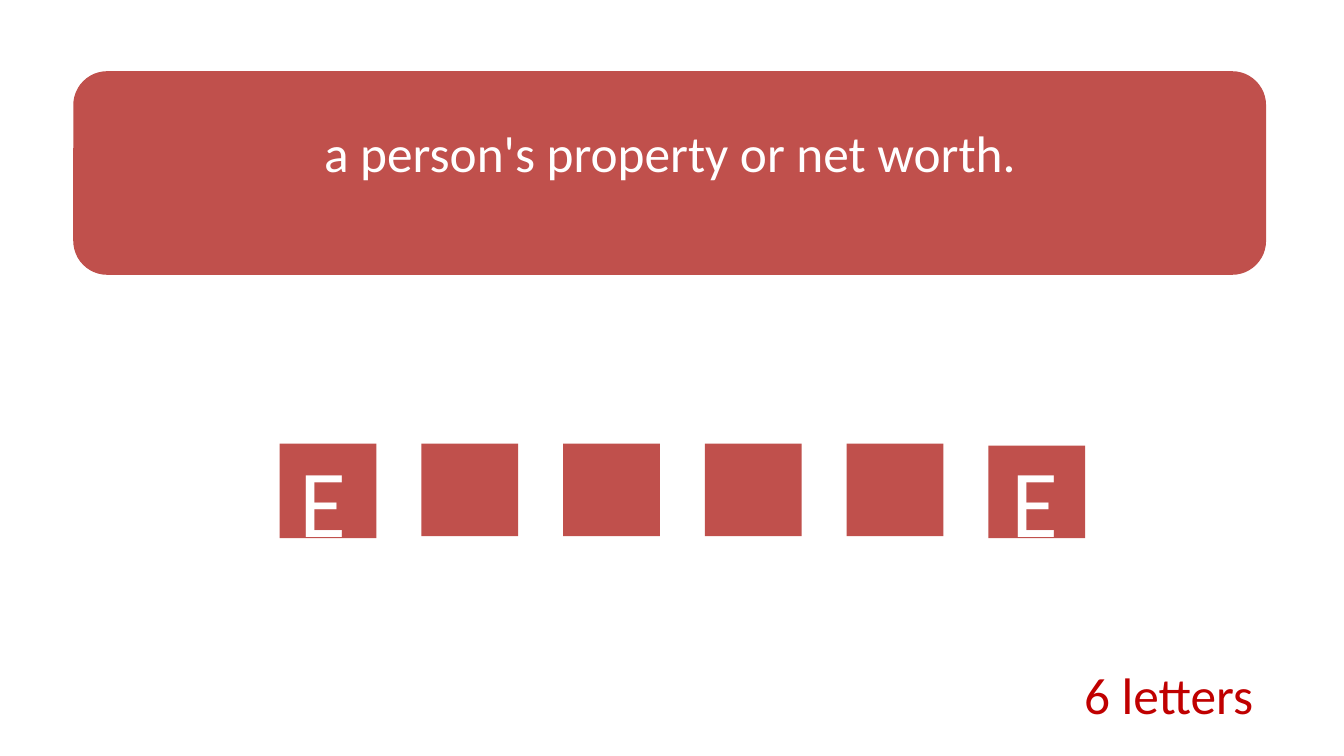
from dataclasses import dataclass

from pptx import Presentation, util as u
from pptx.dml.color import RGBColor
from pptx.enum import shapes, text


@dataclass(frozen=True)
class Theme:
    """Colours, font and type sizes of the word puzzle."""
    tile: RGBColor = RGBColor(0xC0, 0x50, 0x4C)
    light: RGBColor = RGBColor(0xFF, 0xFF, 0xFF)
    hint: RGBColor = RGBColor(0xC0, 0x00, 0x00)
    font: str = "Calibri"
    body_size: float = 55
    letter_size: float = 102.9


THEME = Theme()
COLUMNS, ROWS = 200, 112.5
SLIDE_WIDTH, SLIDE_HEIGHT = u.Inches(20), u.Inches(11.25)
TILE_LEFT, TILE_PITCH, TILE_WIDTH = 41.6, 21.1, 14.4
TILE_SPANS = [(66, 14.1)] + [(66, 13.8)] * 4 + [(66.3, 13.8)]


def grid_box(left, top, width, height):
    """Turn columns and rows of the slide grid into lengths."""
    column, row = SLIDE_WIDTH / COLUMNS, SLIDE_HEIGHT / ROWS
    return [u.Emu(round(length)) for length in
            (left * column, top * row, width * column, height * row)]


def set_format(target, values):
    """Set each attribute of the target from a dict of values."""
    for name, value in values.items():
        setattr(target, name, value)


def add_block(slide, kind, box):
    """Add a flat filled shape without outline or shadow."""
    shape = slide.shapes.add_shape(kind, *grid_box(*box))
    shape.shadow.inherit = False
    shape.fill.solid()
    shape.fill.fore_color.rgb = THEME.tile
    shape.line.fill.background()


def add_label(slide, wording, box, size, color, spacing, align):
    """Add one line of text in a box without margins."""
    frame = slide.shapes.add_textbox(*grid_box(*box)).text_frame
    set_format(frame, {
        "word_wrap": True, "auto_size": text.MSO_AUTO_SIZE.SHAPE_TO_FIT_TEXT,
        "margin_left": 0, "margin_top": 0, "margin_right": 0, "margin_bottom": 0})
    paragraph = frame.paragraphs[0]
    set_format(paragraph, {"alignment": align, "line_spacing": u.Pt(spacing)})
    run = paragraph.add_run()
    run.text = wording
    set_format(run.font, {"name": THEME.font, "size": u.Pt(size)})
    run.font.color.rgb = color


def add_tiles(slide):
    """Add the row of letter tiles."""
    for index, (top, height) in enumerate(TILE_SPANS):
        left = TILE_LEFT + index * TILE_PITCH
        add_block(slide, shapes.MSO_SHAPE.RECTANGLE, (left, top, TILE_WIDTH, height))


def main():
    """Build the word puzzle slide and save it."""
    presentation = Presentation()
    set_format(presentation, {"slide_width": SLIDE_WIDTH, "slide_height": SLIDE_HEIGHT})
    slide = presentation.slides.add_slide(presentation.slide_layouts[6])
    add_tiles(slide)
    for left in (44.6, 150.5):
        add_label(slide, "E", (left, 62.8, 15.8, 19), THEME.letter_size,
                  THEME.light, 144.1, text.PP_ALIGN.LEFT)
    add_label(slide, "6 letters", (156.7, 101.6, 34.4, 6.8), THEME.body_size,
              THEME.hint, 44.5, text.PP_ALIGN.CENTER)
    add_block(slide, shapes.MSO_SHAPE.ROUNDED_RECTANGLE, (10.9, 10.6, 177.5, 30.3))
    add_label(slide, "a person's property or net worth.", (20.1, 21.8, 159.2, 6),
              THEME.body_size, THEME.light, 38.5, text.PP_ALIGN.CENTER)
    presentation.save("out.pptx")


if __name__ == "__main__":
    main()
